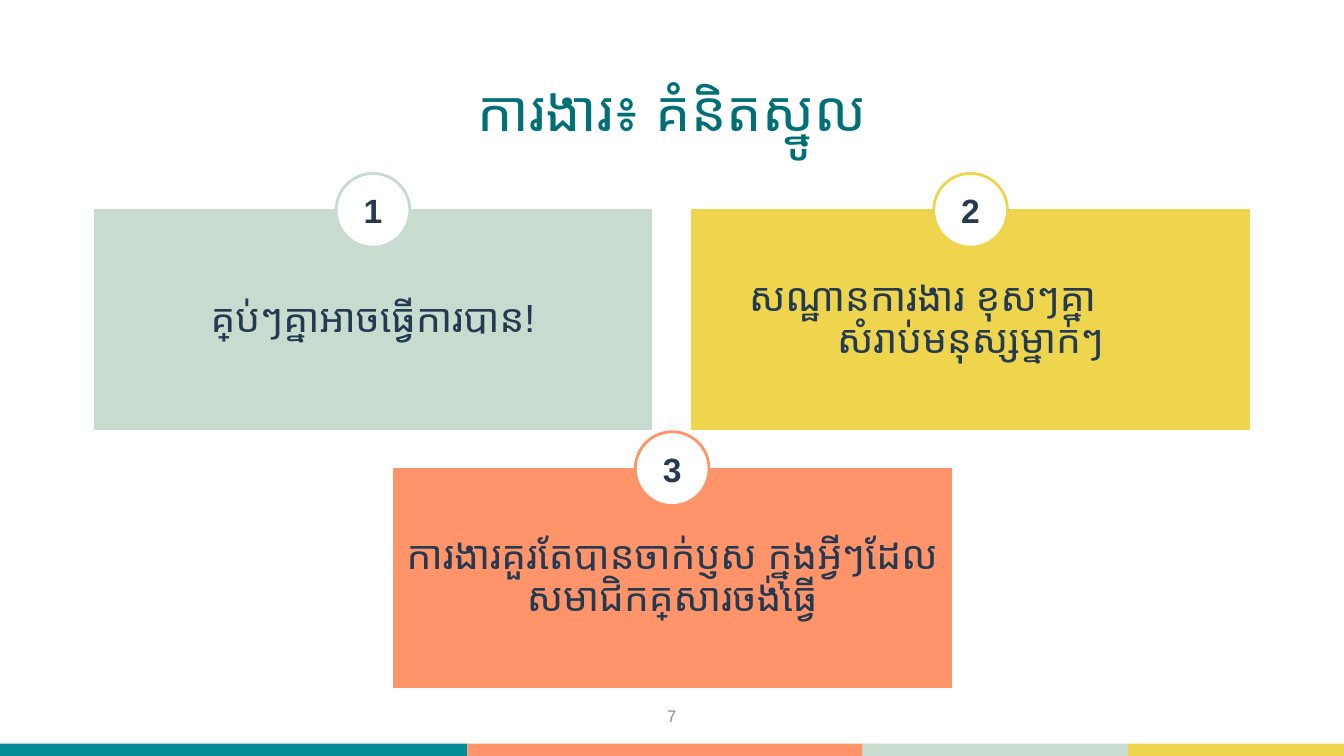
from lxml.etree import SubElement
from pptx import Presentation
from pptx.dml.color import RGBColor
from pptx.enum.shapes import MSO_SHAPE as Shape
from pptx.enum.text import MSO_ANCHOR as Anchor, PP_ALIGN as Align
from pptx.oxml.ns import qn
from pptx.util import Cm, Pt

TEAL, MINT, GOLD, CORAL = "028D94", "C7DCCF", "EFD54E", "FF946B"
WHITE, NAVY = "FFFFFF", "243A50"
WIDE, HIGH = 33.87, 19.05
CARD_W, CARD_H, DISC = 14.12, 5.59, 1.86


def paint(color, code):
    color.rgb = RGBColor.from_string(code)


class Deck:
    """Hold the style and the current slide, and draw its elements."""

    def __init__(self, font):
        self.font = font
        self.prs = Presentation()
        self.prs.slide_width, self.prs.slide_height = Cm(WIDE), Cm(HIGH)
        self.slide = self.prs.slides.add_slide(self.prs.slide_layouts[5])

    def fill_text(self, shape, text, size, color, bold=False, space=1.0, inset=0.0):
        frame = shape.text_frame
        frame.text = text
        frame.word_wrap = True
        frame.vertical_anchor = Anchor.MIDDLE
        frame.margin_left = frame.margin_right = Cm(inset)
        frame.margin_top = frame.margin_bottom = Cm(inset)
        for para in frame.paragraphs:
            para.alignment = Align.CENTER
            para.line_spacing = space
            for run in para.runs:
                run.font.size, run.font.bold = Pt(size), bold
                run.font.name = self.font
                paint(run.font.color, color)
                SubElement(run._r.get_or_add_rPr(), qn("a:cs"), typeface=self.font)

    def title(self, text, x, y, w, h):
        head = self.slide.shapes.title
        head.left, head.top, head.width, head.height = map(Cm, (x, y, w, h))
        self.fill_text(head, text, 40, "017076", space=0.9, inset=0.25)

    def label(self, text, x, y, w, h):
        box = self.slide.shapes.add_textbox(Cm(x), Cm(y), Cm(w), Cm(h))
        self.fill_text(box, text, 12, "8C8C8C")

    def shape(self, kind, x, y, w, h, fill, line=None, width=1):
        item = self.slide.shapes.add_shape(kind, Cm(x), Cm(y), Cm(w), Cm(h))
        item.shadow.inherit = False
        item.fill.solid()
        paint(item.fill.fore_color, fill)
        if line:
            paint(item.line.color, line)
            item.line.width = Pt(width)
        else:
            item.line.fill.background()
        return item

    def card(self, text, x, y, fill):
        item = self.shape(Shape.RECTANGLE, x, y, CARD_W, CARD_H, fill, WHITE)
        self.fill_text(item, text, 28, NAVY, space=0.9, inset=0.3)
        return item

    def badge(self, text, x, y, color):
        left, top = x + (CARD_W - DISC) / 2, y + 0.04 - DISC / 2
        item = self.shape(Shape.OVAL, left, top, DISC, DISC, WHITE, color, 2)
        self.fill_text(item, text, 24, NAVY, bold=True)

    def indent(self, para, left):
        para.alignment = Align.LEFT
        para._p.get_or_add_pPr().set("marL", str(Cm(left)))


def main():
    deck = Deck("Arial")
    left = 0
    for right, color in ((11.78, TEAL), (21.74, CORAL), (28.43, MINT), (WIDE, GOLD)):
        deck.shape(Shape.RECTANGLE, left, 18.74, right - left, HIGH - 18.74, color)
        left = right
    deck.label("7", 13.12, 17.53, 7.62, 1.02)
    deck.title("ការងារ៖ គំនិតស្នូល", 2.33, 1.02, 29.21, 3.68)

    cards = (
        ("គ្រប់ៗគ្នាអាចធ្វើការបាន!", 2.34, 5.26, MINT),
        ("សណ្ឋានការងារ ខុសៗគ្នា\nសំរាប់មនុស្សម្នាក់ៗ", 17.4, 5.26, GOLD),
        ("ការងារគួរតែបានចាក់ប្ញស ក្នុងអ្វីៗដែលសមាជិកគ្រួសារចង់ធ្វើ", 9.88, 11.77, CORAL),
    )
    boxes = [deck.card(*card) for card in cards]
    deck.indent(boxes[1].text_frame.paragraphs[0], 1.18)
    for num, (_, x, y, color) in enumerate(cards, 1):
        deck.badge(str(num), x, y, color)
    deck.prs.save("out.pptx")


if __name__ == "__main__":
    main()
